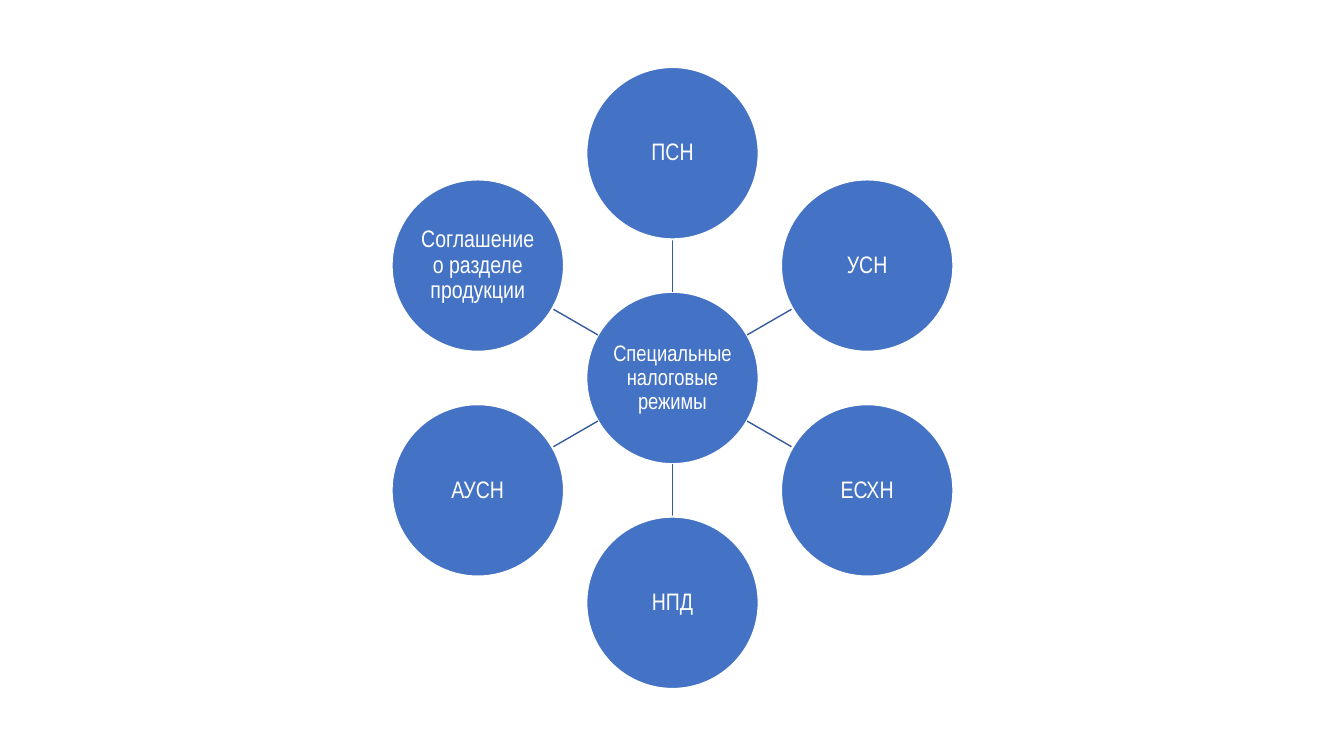
from math import cos, radians, sin

from lxml.etree import SubElement
from pptx import Presentation
from pptx.dml.color import RGBColor
from pptx.enum.shapes import MSO_CONNECTOR, MSO_SHAPE
from pptx.enum.text import MSO_ANCHOR, PP_ALIGN
from pptx.oxml.ns import qn
from pptx.util import Inches, Pt

BLUE = RGBColor(0x44, 0x72, 0xC4)
DARK_BLUE = RGBColor(0x36, 0x5B, 0x9D)
WHITE = RGBColor(0xFF, 0xFF, 0xFF)

CENTER_X, CENTER_Y = 6.67, 3.75
DIAMETER = 1.71
ORBIT = 2.23
SPOKE_START = DIAMETER / 2
SPOKE_END = ORBIT - DIAMETER / 2
REGIMES = ["ПСН", "УСН", "ЕСХН", "НПД", "АУСН", "Соглашение о разделе продукции"]

presentation = Presentation()
presentation.slide_width = Inches(13.33)
presentation.slide_height = Inches(7.5)
slide = presentation.slides.add_slide(presentation.slide_layouts[6])


def point_at(distance, angle):
    """Return the point at a distance from the hub, clockwise from the top."""
    return (Inches(CENTER_X + distance * sin(angle)),
            Inches(CENTER_Y - distance * cos(angle)))


def add_circle(center, text, font_size):
    diameter = Inches(DIAMETER)
    left, top = (coordinate - diameter // 2 for coordinate in center)
    circle = slide.shapes.add_shape(MSO_SHAPE.OVAL, left, top, diameter, diameter)
    circle.shadow.inherit = False
    circle.fill.solid()
    circle.fill.fore_color.rgb = BLUE
    circle.line.color.rgb = WHITE
    circle.line.width = Pt(1.5)

    text_frame = circle.text_frame
    text_frame.word_wrap = True
    text_frame.vertical_anchor = MSO_ANCHOR.MIDDLE
    text_frame.margin_left = text_frame.margin_right = Inches(0.01)
    text_frame.margin_top = text_frame.margin_bottom = Inches(0.01)
    text_frame.text = text
    paragraph = text_frame.paragraphs[0]
    paragraph.alignment = PP_ALIGN.CENTER
    paragraph.line_spacing = 0.9
    font = paragraph.runs[0].font
    font.name = "Arial Narrow"
    font.size = Pt(font_size)
    font.color.rgb = WHITE


add_circle(point_at(0, 0), "Специальные налоговые режимы", 16)

for index, regime in enumerate(REGIMES):
    angle = radians(index * 360 / len(REGIMES))
    spoke = slide.shapes.add_connector(
        MSO_CONNECTOR.STRAIGHT,
        *point_at(SPOKE_START, angle), *point_at(SPOKE_END, angle))
    spoke.line.color.rgb = DARK_BLUE
    spoke.line.width = Pt(1)
    SubElement(spoke.element.spPr, qn("a:effectLst"))
    add_circle(point_at(ORBIT, angle), regime, 17)

presentation.save("out.pptx")
